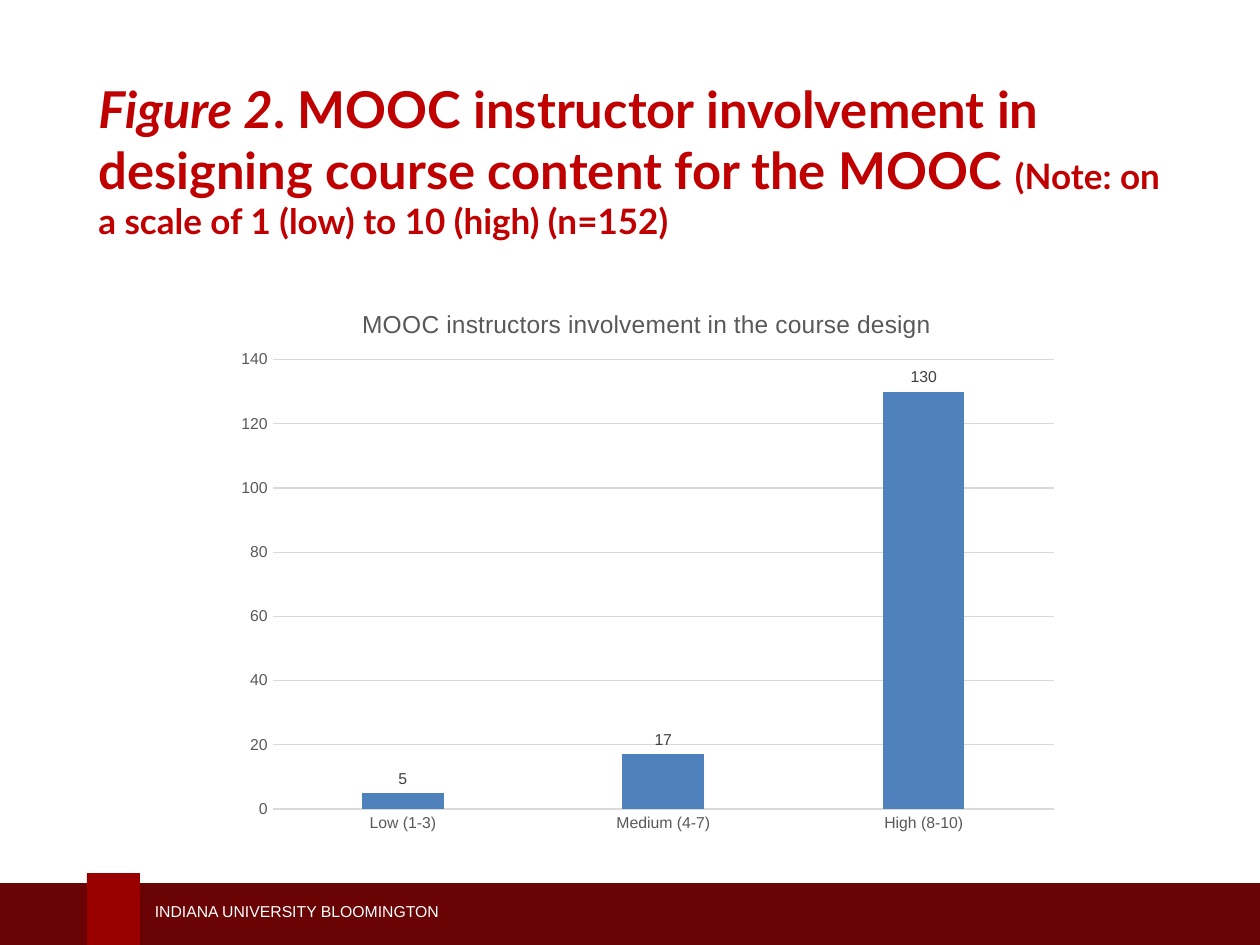
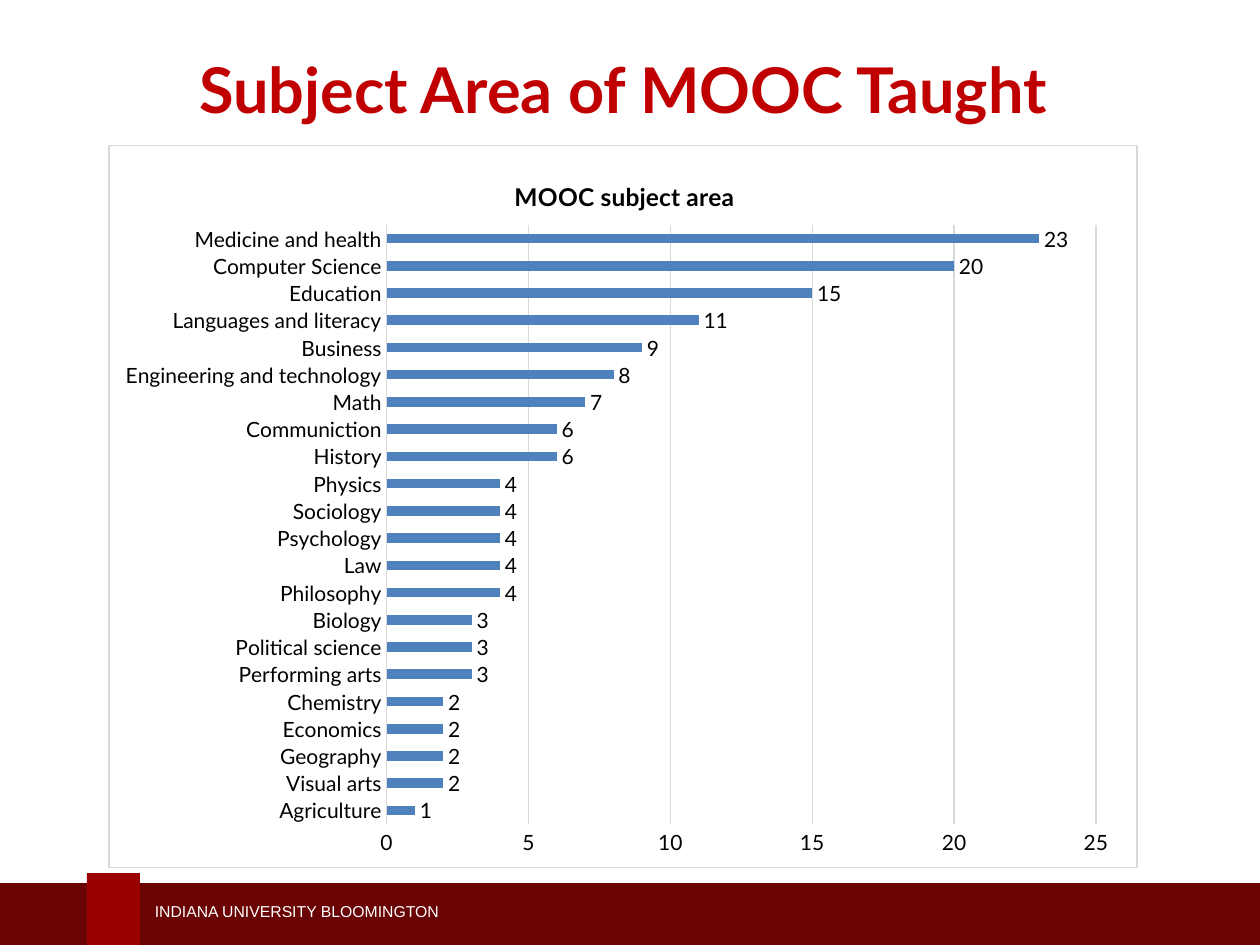
import pptx
import pptx.util
import pptx.dml.color
import pptx.chart.data
import pptx.enum.chart
import pptx.enum.shapes
import pptx.enum.text
import pptx.oxml
import pptx.oxml.ns
from dataclasses import dataclass

PX_PER_INCH = 100
TITLE_ONLY = 5
ALIGN = pptx.enum.text.PP_ALIGN
ANCHOR = pptx.enum.text.MSO_ANCHOR
CHART = pptx.enum.chart
qn = pptx.oxml.ns.qn


@dataclass(frozen=True)
class Theme:
    title: str = "C00000"
    band: str = "690304"
    tab: str = "990000"
    white: str = "FFFFFF"
    black: str = "000000"
    bar: str = "4F81BD"
    grid: str = "D9D9D9"
    muted: str = "595959"
    label: str = "404040"
    head_font: str = "Lato"
    body_font: str = "Arial"
    headline: int = 36
    figure: int = 29
    gap: int = 28
    note: int = 20
    chart_title: int = 14
    chart_text: int = 12
    small: int = 9
    hairline: float = 0.75


T = Theme()

DESIGN = {
    "type": CHART.XL_CHART_TYPE.COLUMN_CLUSTERED,
    "box": (176, 223, 674, 446),
    "title": "MOOC instructors involvement in the course design",
    "title_at": (0.16, 0.04),
    "plot_at": (0.06, 0.14, 0.92, 0.8),
    "data": {"Low (1-3)": 5, "Medium (4-7)": 17, "High (8-10)": 130},
    "scale": {"minimum_scale": 0, "maximum_scale": 140, "major_unit": 20},
    "bars": {"gap_width": 219, "overlap": -27},
    "title_font": {"name": T.body_font, "size": T.chart_title, "bold": False, "color": T.muted},
    "axis_font": {"name": T.body_font, "size": T.small, "color": T.muted},
    "label_font": {"name": T.body_font, "size": T.small, "color": T.label},
    "framed": False,
}

CHART_TEXT = {"name": T.head_font, "size": T.chart_text, "color": T.black}

SUBJECTS = {
    "type": CHART.XL_CHART_TYPE.BAR_CLUSTERED,
    "box": (86, 115, 817, 574),
    "title": "MOOC subject area",
    "title_at": (0.39, 0.04),
    "plot_at": (0.27, 0.11, 0.69, 0.83),
    "data": {
        "Agriculture": 1, "Visual arts": 2, "Geography": 2, "Economics": 2,
        "Chemistry": 2, "Performing arts": 3, "Political science": 3,
        "Biology": 3, "Philosophy": 4, "Law": 4, "Psychology": 4,
        "Sociology": 4, "Physics": 4, "History": 6, "Communiction": 6,
        "Math": 7, "Engineering and technology": 8, "Business": 9,
        "Languages and literacy": 11, "Education": 15,
        "Computer Science": 20, "Medicine and health": 23,
    },
    "scale": {"minimum_scale": 0, "maximum_scale": 25, "major_unit": 5},
    "bars": {"gap_width": 182},
    "title_font": {**CHART_TEXT, "size": T.chart_title, "bold": True},
    "axis_font": CHART_TEXT,
    "label_font": CHART_TEXT,
    "framed": True,
}


def px(n):
    return pptx.util.Emu(n * 914400 // PX_PER_INCH)


def box(*lengths):
    return [px(n) for n in lengths]


def rgb(color):
    return pptx.dml.color.RGBColor.from_string(color)


def assign(obj, values):
    for name, value in values.items():
        setattr(obj, name, value)


def set_font(font, values):
    for name, value in values.items():
        if name == "color":
            font.color.rgb = rgb(value)
        else:
            setattr(font, name, pptx.util.Pt(value) if name == "size" else value)


def add_block(slide, color, *place):
    sp = slide.shapes.add_shape(pptx.enum.shapes.MSO_SHAPE.RECTANGLE, *box(*place))
    sp.shadow.inherit = False
    sp.fill.solid()
    sp.fill.fore_color.rgb = rgb(color)
    sp.line.fill.background()


def add_footer(slide):
    add_block(slide, T.band, 0, 701, 1000, 49)
    add_block(slide, T.tab, 69, 693, 42, 57)
    tf = slide.shapes.add_textbox(*box(113, 711, 395, 25)).text_frame
    assign(tf, {"word_wrap": True, "vertical_anchor": ANCHOR.MIDDLE})
    r = tf.paragraphs[0].add_run()
    r.text = "INDIANA UNIVERSITY BLOOMINGTON"
    set_font(r.font, {"name": T.body_font, "size": T.small, "color": T.white})


def set_title(slide, place, align, runs):
    sp = slide.shapes.title
    assign(sp, dict(zip(("left", "top", "width", "height"), box(*place))))
    tf = sp.text_frame
    assign(tf, {
        "word_wrap": True,
        "vertical_anchor": ANCHOR.MIDDLE,
        "auto_size": pptx.enum.text.MSO_AUTO_SIZE.NONE,
    })
    p = tf.paragraphs[0]
    p.alignment = align
    for text, size, italic in runs:
        r = p.add_run()
        r.text = text
        set_font(r.font, {"name": T.head_font, "size": size, "bold": True,
                          "italic": italic, "color": T.title})


def set_layout(parent, index, fractions, inner=False):
    for old in parent.findall(qn("c:layout")):
        parent.remove(old)
    target = '<c:layoutTarget val="inner"/>' if inner else ""
    names = "xywh"[:len(fractions)]
    modes = "".join(f'<c:{n}Mode val="edge"/>' for n in names[:2])
    sizes = "".join(f'<c:{n} val="{v}"/>' for n, v in zip(names, fractions))
    parent.insert(index, pptx.oxml.parse_xml(
        f'<c:layout {pptx.oxml.ns.nsdecls("c")}><c:manualLayout>'
        f'{target}{modes}{sizes}</c:manualLayout></c:layout>'))


def set_frame(chart_xml, framed):
    fill = line = "<a:noFill/>"
    if framed:
        fill, line = (f'<a:solidFill><a:srgbClr val="{c}"/></a:solidFill>'
                      for c in (T.white, T.grid))
    chart_xml.addnext(pptx.oxml.parse_xml(
        f'<c:spPr {pptx.oxml.ns.nsdecls("c", "a")}>{fill}'
        f'<a:ln w="{pptx.util.Pt(T.hairline)}">{line}</a:ln></c:spPr>'))


def set_line(line):
    line.color.rgb = rgb(T.grid)
    line.width = pptx.util.Pt(T.hairline)


def style_axes(chart, spec):
    for axis in (chart.category_axis, chart.value_axis):
        assign(axis, {"major_tick_mark": CHART.XL_TICK_MARK.NONE,
                      "minor_tick_mark": CHART.XL_TICK_MARK.NONE})
        set_font(axis.tick_labels.font, spec["axis_font"])
    set_line(chart.category_axis.format.line)
    chart.value_axis.format.line.fill.background()
    chart.value_axis.has_major_gridlines = True
    set_line(chart.value_axis.major_gridlines.format.line)
    assign(chart.value_axis, spec["scale"])


def style_bars(plot, spec):
    assign(plot, {"vary_by_categories": False, "has_data_labels": True, **spec["bars"]})
    assign(plot.data_labels, {"show_value": True,
                              "position": CHART.XL_LABEL_POSITION.OUTSIDE_END})
    set_font(plot.data_labels.font, spec["label_font"])
    fill = plot.series[0].format.fill
    fill.solid()
    fill.fore_color.rgb = rgb(T.bar)


def add_bar_chart(slide, spec):
    data = pptx.chart.data.CategoryChartData()
    data.categories = list(spec["data"])
    data.add_series("Series 1", list(spec["data"].values()))
    chart = slide.shapes.add_chart(spec["type"], *box(*spec["box"]), data).chart
    assign(chart, {"has_legend": False, "has_title": True})
    set_font(chart.font, spec["axis_font"])
    r = chart.chart_title.text_frame.paragraphs[0].add_run()
    r.text = spec["title"]
    set_font(r.font, spec["title_font"])
    style_axes(chart, spec)
    style_bars(chart.plots[0], spec)
    chart_xml = chart.element.find(qn("c:chart"))
    set_layout(chart_xml.find(qn("c:title")), 1, spec["title_at"])
    set_layout(chart_xml.find(qn("c:plotArea")), 0, spec["plot_at"], inner=True)
    set_frame(chart_xml, spec["framed"])


def add_chart_slide(prs, place, align, runs, spec):
    slide = prs.slides.add_slide(prs.slide_layouts[TITLE_ONLY])
    add_footer(slide)
    set_title(slide, place, align, runs)
    add_bar_chart(slide, spec)


def main():
    prs = pptx.Presentation()
    assign(prs, {"slide_width": px(1000), "slide_height": px(750)})
    add_chart_slide(prs, (68, 38, 875, 177), ALIGN.LEFT, [
        ("Figure 2", T.figure, True),
        (". MOOC instructor involvement in designing course content for the MOOC",
         T.figure, False),
        (" ", T.gap, False),
        ("(Note: on a scale of 1 (low) to 10 (high) (n=152)", T.note, False),
    ], DESIGN)
    add_chart_slide(prs, (57, 35, 875, 70), ALIGN.CENTER, [
        ("Subject Area of MOOC Taught", T.headline, False),
    ], SUBJECTS)
    prs.save("out.pptx")


if __name__ == "__main__":
    main()
